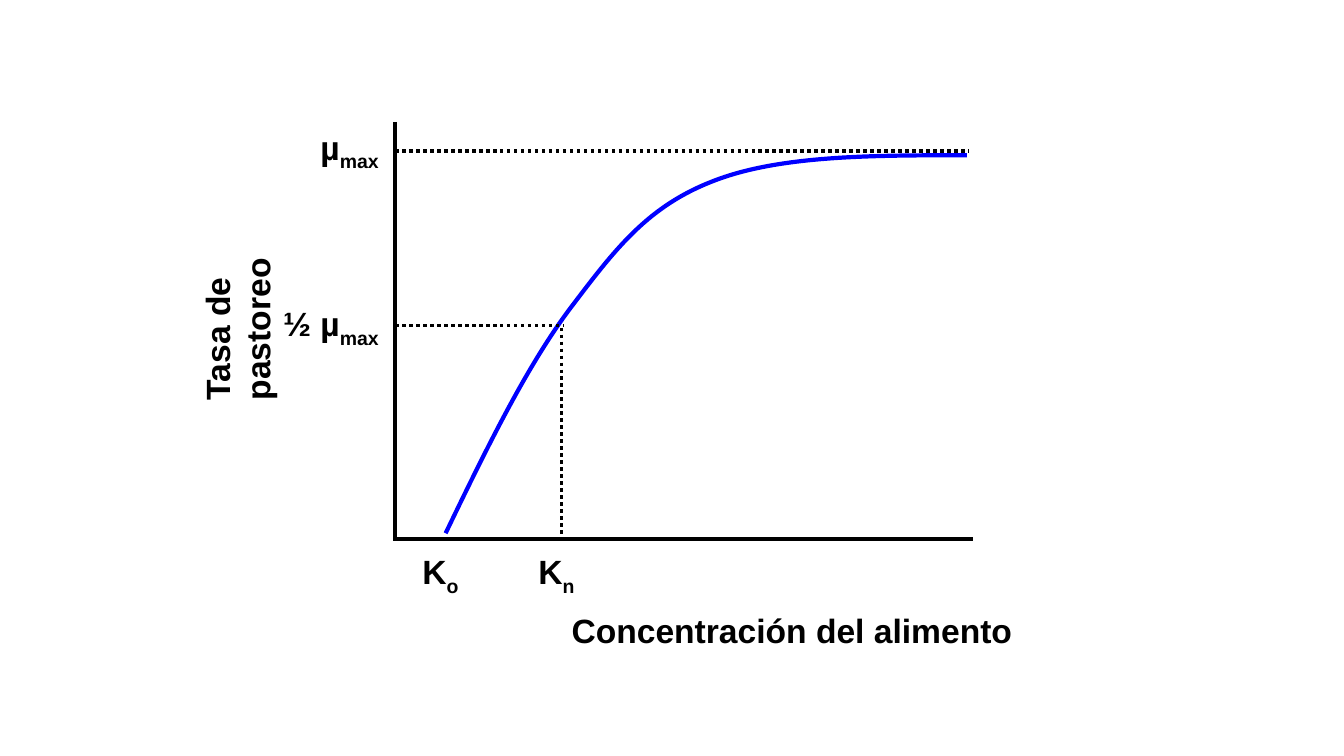
from lxml import etree
from pptx import Presentation
from pptx.dml.color import RGBColor
from pptx.enum import dml, shapes, text
from pptx.oxml.ns import qn
from pptx.util import Inches, Pt

BLACK = RGBColor(0x00, 0x00, 0x00)
BLUE = RGBColor(0x00, 0x00, 0xFF)

AXIS_X, AXIS_Y = 3.92, 5.35
MAX_RATE_Y, HALF_RATE_Y = 1.5, 3.23
HALF_FOOD_X = 5.57
LABEL_HEIGHT = 0.5
FOOD_LABEL_Y = 5.42
CURVE_START = (4.42, 5.29)
CURVE_BEZIERS = [
    [(4.82, 4.46), (5.23, 3.62), (5.67, 3.04)],
    [(6.11, 2.46), (6.43, 2.04), (7.09, 1.79)],
    [(7.74, 1.54), (8.66, 1.54), (9.59, 1.54)],
]


def add_line(slide, start, end, width=3, dash=None):
    line = slide.shapes.add_connector(
        shapes.MSO_CONNECTOR.STRAIGHT, *map(Inches, start + end))
    line.line.color.rgb = BLACK
    line.line.width = Pt(width)
    if dash:
        line.line.dash_style = dash
    etree.SubElement(line._element.spPr, qn("a:effectLst"))


def add_guide(slide, start, end):
    add_line(slide, start, end, 2.5, dml.MSO_LINE.ROUND_DOT)


def add_curve(slide, start, beziers):
    builder = slide.shapes.build_freeform(*map(Inches, start))
    builder.add_line_segments(
        [tuple(map(Inches, point)) for bezier in beziers for point in bezier],
        close=False)
    curve = builder.convert_to_shape()
    outline = next(curve._element.iter(qn("a:path")))
    segments = outline.findall(qn("a:lnTo"))
    for first in range(0, len(segments), 3):
        cubic = etree.SubElement(outline, qn("a:cubicBezTo"))
        for segment in segments[first:first + 3]:
            cubic.append(segment[0])
            outline.remove(segment)
    curve.fill.background()
    curve.line.color.rgb = BLUE
    curve.line.width = Pt(3)
    curve.shadow.inherit = False


def add_label(slide, box, wording, subscript="", wrap=False):
    label = slide.shapes.add_textbox(*map(Inches, box))
    frame = label.text_frame
    frame.word_wrap = wrap
    frame.auto_size = text.MSO_AUTO_SIZE.SHAPE_TO_FIT_TEXT
    paragraph = frame.paragraphs[0]
    paragraph.font.name = "Arial"
    paragraph.font.size = Pt(24)
    paragraph.font.bold = True
    paragraph.font.color.rgb = BLACK
    paragraph.add_run().text = wording
    if subscript:
        lowered = paragraph.add_run()
        lowered.text = subscript
        lowered._r.get_or_add_rPr().set("baseline", "-25000")
    return frame


def add_vertical_label(slide, box, wording):
    frame = add_label(slide, box, wording, wrap=True)
    frame._txBody.bodyPr.set("vert", "vert270")


def main():
    prs = Presentation()
    prs.slide_width = Inches(13.33)
    prs.slide_height = Inches(7.5)
    slide = prs.slides.add_slide(prs.slide_layouts[6])

    add_line(slide, (AXIS_X, 1.21), (AXIS_X, 5.37))
    add_line(slide, (3.9, AXIS_Y), (9.65, AXIS_Y))
    add_curve(slide, CURVE_START, CURVE_BEZIERS)

    add_guide(slide, (AXIS_X, MAX_RATE_Y), (9.61, MAX_RATE_Y))
    add_guide(slide, (AXIS_X, HALF_RATE_Y), (5.59, HALF_RATE_Y))
    add_guide(slide, (HALF_FOOD_X, 3.25), (HALF_FOOD_X, 5.33))

    for wording, top, width in (("µ", 1.21, 0.84), ("½ µ", 2.96, 1.21)):
        add_label(slide, (AXIS_X - width, top, width, LABEL_HEIGHT),
                  wording, "max")
    for subscript, left in (("o", 4.09), ("n", 5.24)):
        add_label(slide, (left, FOOD_LABEL_Y, 0.58, LABEL_HEIGHT),
                  "K", subscript)

    add_vertical_label(slide, (1.9, 2.07, 1.01, 2), "Tasa de pastoreo")
    add_label(slide, (HALF_FOOD_X, 6, 4.62, LABEL_HEIGHT),
              "Concentración del alimento")

    prs.save("out.pptx")


if __name__ == "__main__":
    main()
